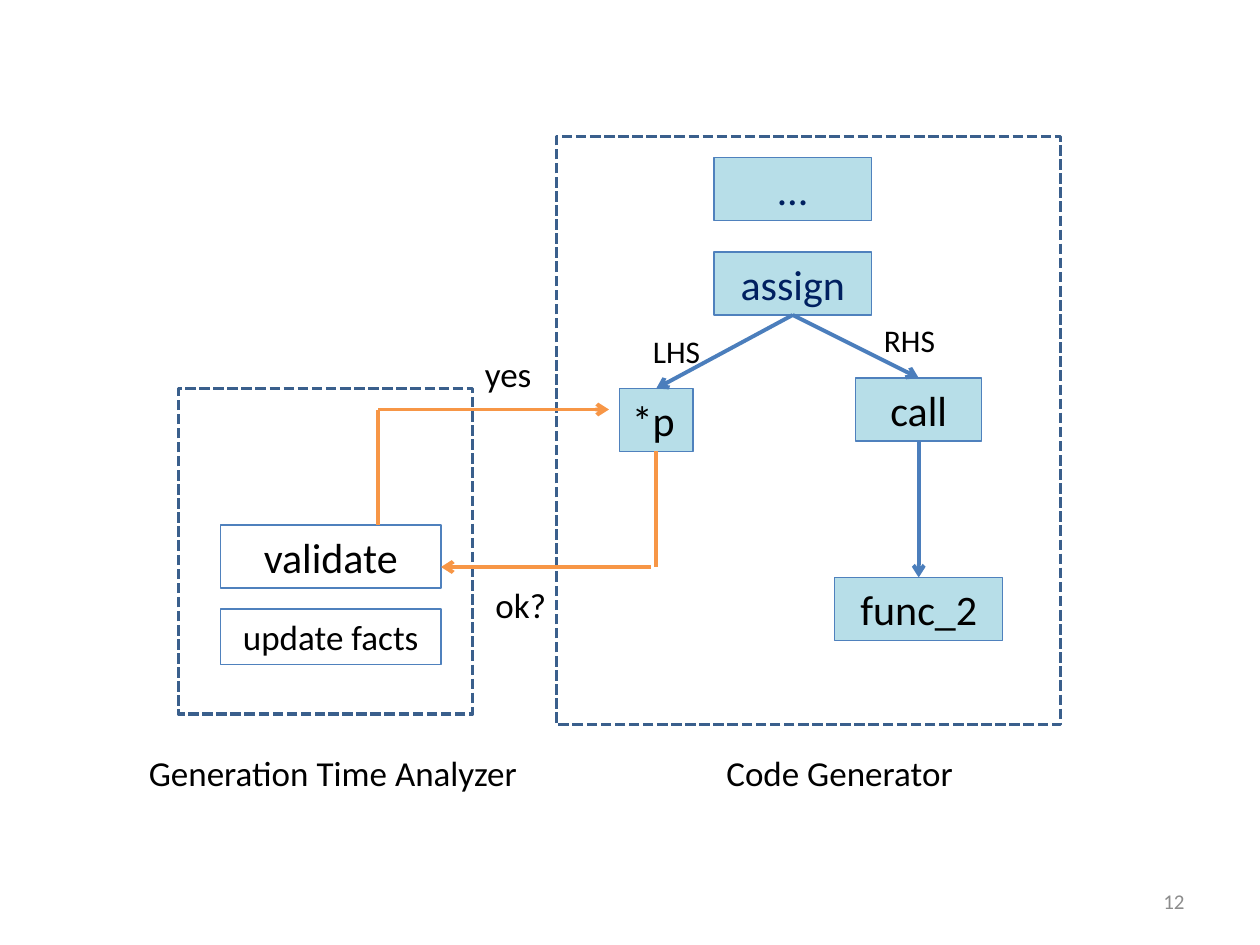
from dataclasses import dataclass

from lxml import etree
from pptx import Presentation
from pptx import util as u
from pptx.dml.color import RGBColor
from pptx.enum import dml, shapes, text
from pptx.oxml.ns import qn

UNIT = u.Inches(1) / 12  # grid: 120 columns by 90 rows
LEFT, CENTER, RIGHT = text.PP_ALIGN.LEFT, text.PP_ALIGN.CENTER, text.PP_ALIGN.RIGHT


@dataclass(frozen=True)
class Theme:
    font: str = "Calibri"
    ink: str = "000000"
    navy: str = "002060"
    muted: str = "8C8C8C"
    node: str = "B7DEE8"
    outline: str = "4F81BD"
    frame: str = "3A5F8C"
    tree: str = "4B7EBC"
    message: str = "F79646"
    node_size: int = 24
    caption_size: int = 20
    edge_size: int = 18
    number_size: int = 12


T = Theme()


def rgb(value):
    return RGBColor.from_string(value)


def place(box, x, y, w, h):
    """Turn grid cells inside a box into slide lengths."""
    return [round(v * UNIT) for v in (box[0] + x, box[1] + y, w, h)]


def set_text(sp, words, size, color=T.ink, align=LEFT, anchor=text.MSO_ANCHOR.TOP,
             fit=text.MSO_AUTO_SIZE.SHAPE_TO_FIT_TEXT):
    tf = sp.text_frame
    frame = {"word_wrap": True, "auto_size": fit, "vertical_anchor": anchor}
    for name, value in frame.items():
        setattr(tf, name, value)
    p = tf.paragraphs[0]
    p.alignment = align
    r = p.add_run()
    r.text = words
    for name, value in {"name": T.font, "size": u.Pt(size)}.items():
        setattr(r.font, name, value)
    r.font.color.rgb = rgb(color)


def add_rect(s, box, cells, line, width, fill=None):
    sp = s.shapes.add_shape(shapes.MSO_SHAPE.RECTANGLE, *place(box, *cells))
    sp.shadow.inherit = False
    if fill:
        sp.fill.solid()
        sp.fill.fore_color.rgb = rgb(fill)
    else:
        sp.fill.background()
    sp.line.color.rgb = rgb(line)
    sp.line.width = u.Pt(width)
    return sp


def add_frame(s, box):
    sp = add_rect(s, box, (0, 0, *box[2:]), T.frame, 2)
    sp.line.dash_style = dml.MSO_LINE.SQUARE_DOT


def add_node(s, box, cells, words, fill=None, size=T.node_size, color=T.ink, align=CENTER):
    sp = add_rect(s, box, cells, T.outline, 0.75, fill)
    set_text(sp, words, size, color, align)


def add_label(s, box, cells, words, size=T.caption_size, **look):
    sp = s.shapes.add_textbox(*place(box, *cells))
    set_text(sp, words, size, **look)


def add_line(s, box, start, end, color, arrow=True):
    points = place(box, *start, 0, 0)[:2] + place(box, *end, 0, 0)[:2]
    c = s.shapes.add_connector(shapes.MSO_CONNECTOR.STRAIGHT, *points)
    c.line.color.rgb = rgb(color)
    c.line.width = u.Pt(2.25)
    if arrow:
        etree.SubElement(c.line._get_or_add_ln(), qn("a:tailEnd"), type="arrow")
    etree.SubElement(c._element.spPr, qn("a:effectLst"))


def code_generator(s, box):
    add_frame(s, box)
    # Syntax tree nodes
    for cells, words, look in (
        ((15, 2, 15, 6), "…", {"color": T.navy}),
        ((15, 11, 15, 6), "assign", {"color": T.navy}),
        ((6, 24, 7, 6), "*p", {"align": LEFT}),
        ((28.5, 23, 12, 6), "call", {}),
        ((26.5, 42, 16, 6), "func_2", {}),
    ):
        add_node(s, box, cells, words, T.node, **look)
    # Tree edges and their labels
    assign, pointer, call = (22.5, 17), (9.5, 24), (34.5, 23)
    for start, end in ((assign, call), (assign, pointer), ((34.5, 29), (34.5, 42))):
        add_line(s, box, start, end, T.tree)
    add_label(s, box, (8, 18, 8, 4.8), "LHS", T.edge_size)
    add_label(s, box, (30, 17, 9, 4.8), "RHS", T.edge_size)
    # Caption
    add_label(s, box, (15, box[3] + 2, 25, 5.3), "Code Generator")


def analyzer(s, box):
    add_frame(s, box)
    add_node(s, box, (4, 13, 21, 6), "validate")
    add_node(s, box, (4, 21, 21, 5.3), "update facts", size=T.caption_size)
    # Caption
    add_label(s, box, (-4, box[3] + 3, 43, 5.3), "Generation Time Analyzer")


def messages(s, box):
    # Question from the generator
    add_line(s, box, (26.5, 10), (26.5, 21), T.message, arrow=False)
    add_line(s, box, (26, 21), (6, 21), T.message)
    add_label(s, box, (10, 22, 8, 5.3), "ok?")
    # Answer from the analyzer
    add_line(s, box, (0, 17), (0, 6), T.message, arrow=False)
    add_line(s, box, (0, 6), (22, 6), T.message)
    add_label(s, box, (9, 0, 7, 5.3), "yes")


def slide_number(s, box):
    add_label(s, box, (0, 0, *box[2:]), "12", T.number_size, color=T.muted, align=RIGHT,
              anchor=text.MSO_ANCHOR.MIDDLE, fit=text.MSO_AUTO_SIZE.NONE)


def main():
    prs = Presentation()
    prs.slide_width, prs.slide_height = u.Inches(10), u.Inches(7.5)
    s = prs.slides.add_slide(prs.slide_layouts[6])
    code_generator(s, (53, 13, 48, 56))
    analyzer(s, (17, 37, 28, 31))
    messages(s, (36, 33, 26.5, 27.3))
    slide_number(s, (86, 83.4, 28, 4.8))
    prs.save("out.pptx")


if __name__ == "__main__":
    main()
